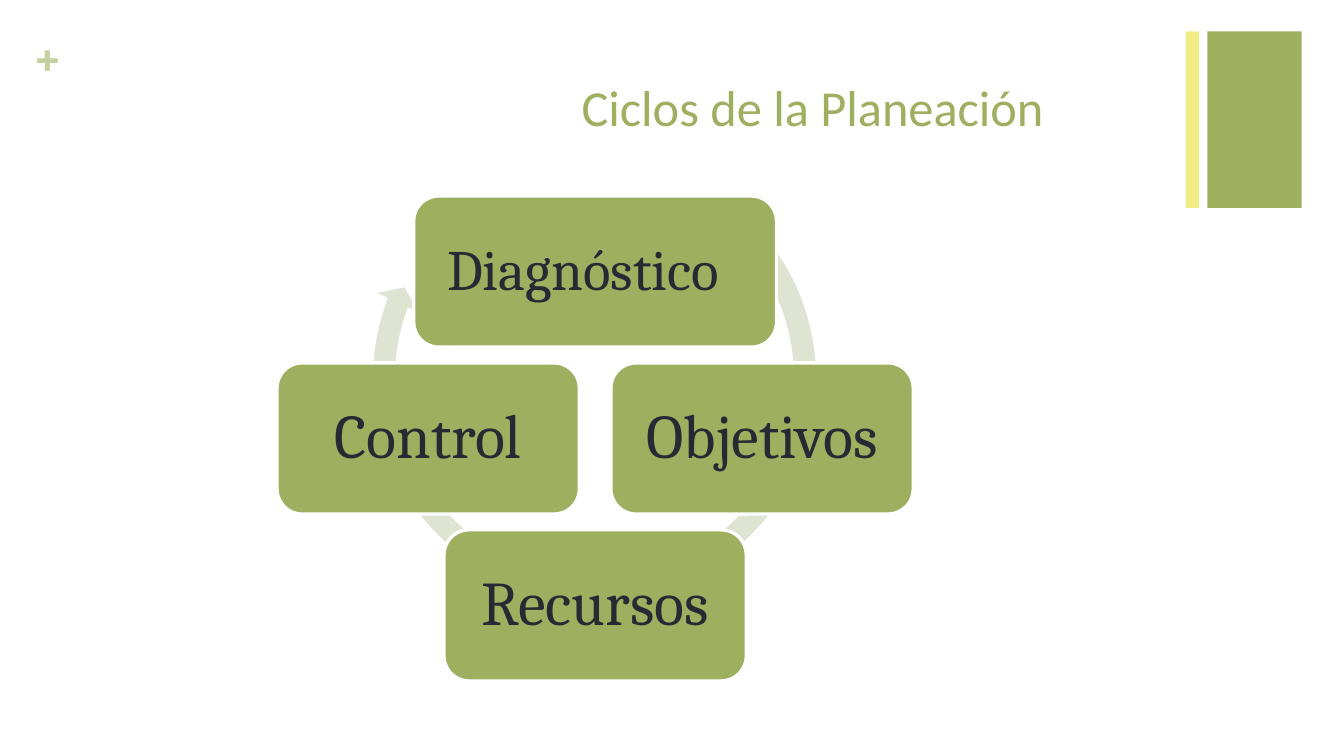
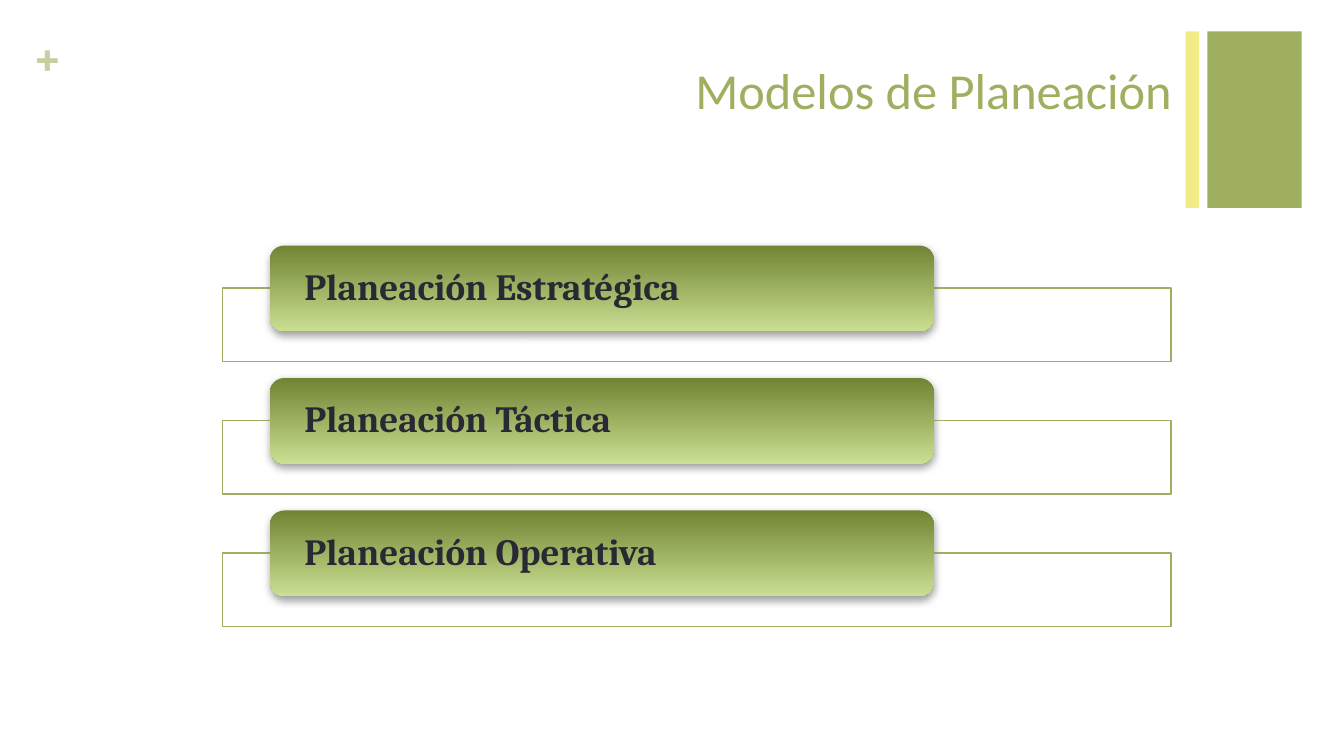
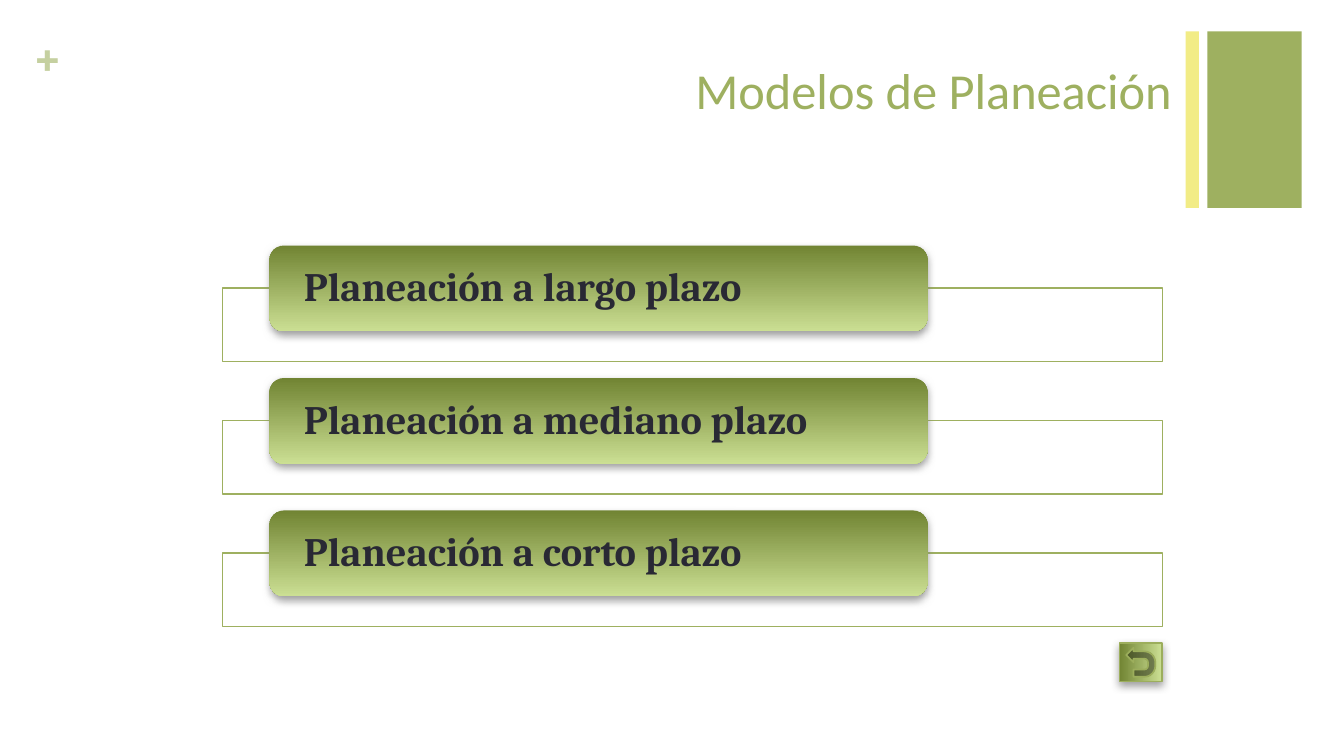
"""Build three slides on the planning cycle and the planning models."""
from lxml.etree import SubElement
from pptx import Presentation
from pptx.dml.color import RGBColor
from pptx.enum.shapes import MSO_SHAPE as Preset
from pptx.enum.text import MSO_ANCHOR as Anchor, MSO_AUTO_SIZE as AutoSize, PP_ALIGN as Align
from pptx.oxml import parse_xml
from pptx.oxml.ns import nsdecls, qn
from pptx.util import Inches, Pt

GREEN = RGBColor(0x9E, 0xB0, 0x60)
DARK_GREEN = RGBColor(0x71, 0x84, 0x33)
LIGHT_GREEN = RGBColor(0xCB, 0xDF, 0x93)
BUTTON_EDGE = RGBColor(0x9C, 0xAE, 0x5C)
PALE_GREEN = RGBColor(0xC5, 0xD0, 0xA0)
ARROW_GREY = RGBColor(0xDF, 0xE4, 0xD2)
YELLOW = RGBColor(0xF2, 0xEC, 0x86)
WHITE = RGBColor(0xFF, 0xFF, 0xFF)
INK = RGBColor(0x29, 0x29, 0x34)
GRADIENT = (DARK_GREEN, LIGHT_GREEN)
HEADING_FONT, BODY_FONT = "Calibri", "Cambria"

deck = Presentation()
deck.slide_width, deck.slide_height = Inches(11.11), Inches(6.25)
column, row = deck.slide_width / 100, deck.slide_height / 100


def area(left, top, width, height):
    """Turn hundredths of the slide's size into lengths."""
    return [round(share) for share in (left * column, top * row, width * column, height * row)]


def panel(page, preset, box, fill, line=None, weight=1):
    """Add a shape with a flat fill, or with a shaded fill and a shadow."""
    shape = page.shapes.add_shape(preset, *box)
    shape.shadow.inherit = False
    if line is None:
        shape.line.fill.background()
    else:
        shape.line.color.rgb = line
        shape.line.width = Pt(weight)
    if fill is not GRADIENT:
        shape.fill.solid()
        shape.fill.fore_color.rgb = fill
        return shape
    shape.fill.gradient()
    shape.fill.gradient_angle = 270
    for position, (stop, colour) in enumerate(zip(shape.fill.gradient_stops, fill)):
        stop.position = position
        stop.color.rgb = colour
    shape.element.spPr.find(qn("a:effectLst")).append(parse_xml(
        f'<a:outerShdw {nsdecls("a")} blurRad="{Pt(5)}" dist="{Pt(2)}" dir="5400000" '
        'rotWithShape="0"><a:srgbClr val="808080"><a:alpha val="75000"/></a:srgbClr>'
        '</a:outerShdw>'))
    return shape


layout = deck.slide_layouts[5]
wide_title = area(5.49, 7.04, 82.63, 16.32)
pages = []
for heading, box in (
    ("Ciclos de la Planeación", area(16.56, 9.28, 62.02, 13.6)),
    ("Modelos de Planeación", wide_title),
    ("Modelos de Planeación", wide_title),
):
    page = deck.slides.add_slide(layout)
    pages.append(page)
    title = page.shapes.title
    title.left, title.top, title.width, title.height = box
    frame = title.text_frame
    frame.text = heading
    frame.auto_size = AutoSize.NONE
    frame.vertical_anchor = Anchor.TOP
    para = frame.paragraphs[0]
    para.alignment = Align.RIGHT
    font = para.runs[0].font
    font.name, font.size, font.color.rgb = HEADING_FONT, Pt(30), GREEN

cycle_page, level_page, term_page = pages

block = panel(cycle_page, Preset.RECTANGLE, area(89.83, 4.16, 7.02, 23.36), GREEN)
stripe = panel(cycle_page, Preset.RECTANGLE, area(88.21, 4.16, 0.99, 23.36), YELLOW)
plus = cycle_page.shapes.add_textbox(*area(2.43, 3.36, 2.88, 8))
frame = plus.text_frame
frame.text = "+"
frame.margin_left = frame.margin_top = frame.margin_right = frame.margin_bottom = 0
font = frame.paragraphs[0].runs[0].font
font.name, font.size, font.bold, font.color.rgb = BODY_FONT, Pt(30), True, PALE_GREEN
for number, shape in enumerate((block, plus, stripe), start=101):
    shape.element.nvSpPr.cNvPr.set("id", str(number))
    layout.shapes.element.append(shape.element)

labels = []

arrow = panel(cycle_page, Preset.CIRCULAR_ARROW, area(26.91, 19.2, 34.65, 61.6), ARROW_GREY)
for index, value in enumerate((0.047, 2.729, 120.584, 185.87, 0.048)):
    arrow.adjustments[index] = value
for text, across, down, width, size, right_margin in (
    ("Diagnóstico", 0, -1, 27, 34, 0.4),
    ("Objetivos", 1, 0, 22.5, 37, 0.2),
    ("Recursos", 0, 1, 22.5, 37, 0.2),
    ("Control", -1, 0, 22.5, 37, 0.2),
):
    center, middle = 44.28 + 12.42 * across, 58 + 22.08 * down
    box = area(center - width / 2, middle - 10, width, 20)
    step = panel(cycle_page, Preset.ROUNDED_RECTANGLE, box, GREEN, WHITE, 2)
    labels.append((step, text, size, False, Align.CENTER, 0.2, right_margin))

for page, width, size, models in (
    (level_page, 70.57, 22,
     ("Planeación Estratégica", "Planeación Táctica", "Planeación Operativa")),
    (term_page, 69.94, 24,
     ("Planeación a largo plazo", "Planeación a mediano plazo", "Planeación a corto plazo")),
):
    for index, text in enumerate(models):
        drop = 17.52 * index
        outline = panel(page, Preset.RECTANGLE, area(16.56, 38.08 + drop, width, 9.76), WHITE, GREEN)
        white = outline.element.spPr.find(qn("a:solidFill"))[0]
        SubElement(white, qn("a:alpha")).set("val", "90000")
        box = area(16.56 + 0.05 * width, 32.48 + drop, 0.7 * width, 11.36)
        pill = panel(page, Preset.ROUNDED_RECTANGLE, box, GRADIENT)
        labels.append((pill, text, size, True, Align.LEFT, 0.25, 0.25))

button = panel(term_page, Preset.ACTION_BUTTON_RETURN, area(83.44, 84.8, 2.88, 5.6),
               GRADIENT, BUTTON_EDGE)
button.rotation = 270

for shape, text, size, bold, alignment, left_margin, right_margin in labels:
    frame = shape.text_frame
    frame.text = text
    frame.word_wrap = True
    frame.vertical_anchor = Anchor.MIDDLE
    frame.margin_left, frame.margin_right = Inches(left_margin), Inches(right_margin)
    frame.margin_top = frame.margin_bottom = 0
    para = frame.paragraphs[0]
    para.alignment, para.line_spacing = alignment, 0.9
    font = para.runs[0].font
    font.name, font.size, font.bold, font.color.rgb = BODY_FONT, Pt(size), bold, INK

deck.save("out.pptx")
